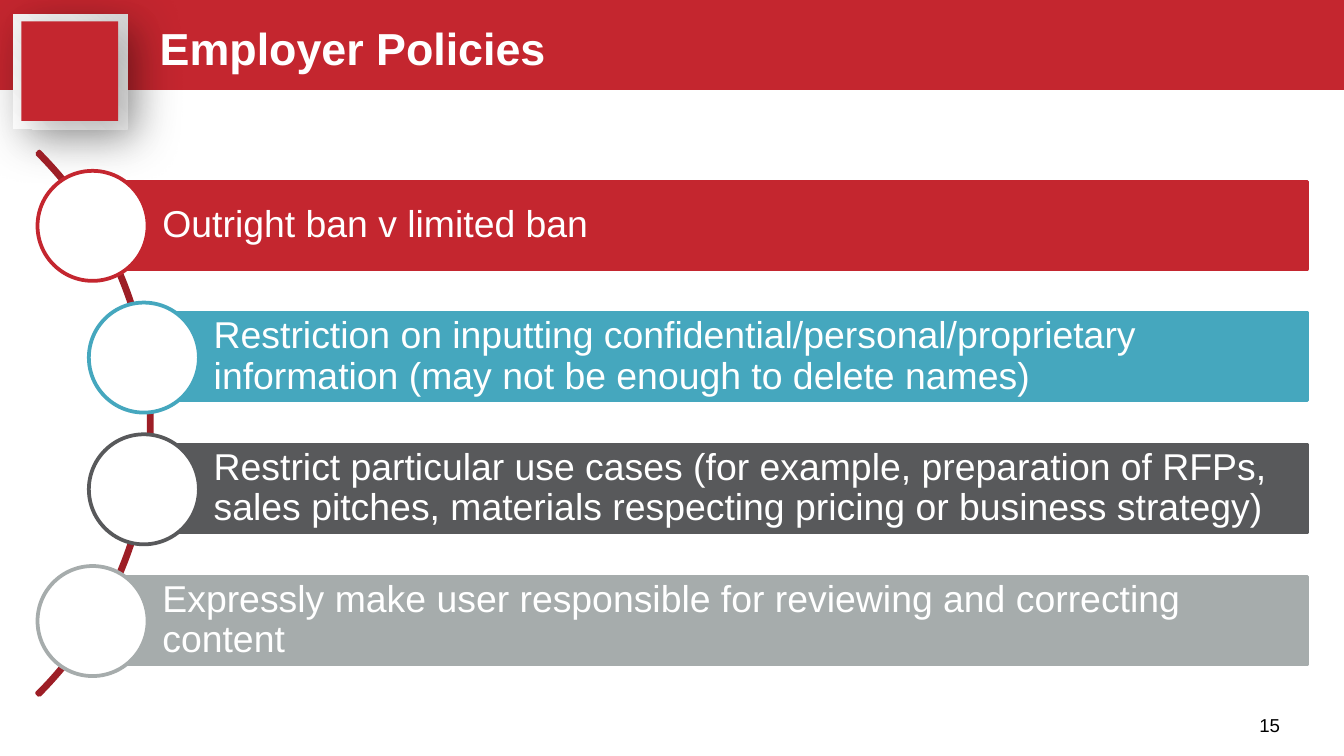
"""Build the Employer Policies slide."""
import lxml.etree
import pptx
import pptx.dml.color
import pptx.enum.shapes
import pptx.enum.text
import pptx.oxml
import pptx.oxml.ns
import pptx.util

Cm, Pt = pptx.util.Cm, pptx.util.Pt
RGB = pptx.dml.color.RGBColor.from_string
KIND = pptx.enum.shapes.MSO_SHAPE
HUES = {"red": "C4262F", "dark": "9D1E26", "teal": "45A7BE", "slate": "58595B",
        "grey": "A6ACAC", "white": "FFFFFF", "black": "000000"}


def draw(kind, left, top, width, height, fill=None, line=None):
    shape = slide.shapes.add_shape(kind, Cm(left), Cm(top), Cm(width), Cm(height))
    shape.shadow.inherit = False
    if fill:
        shape.fill.solid()
        shape.fill.fore_color.rgb = RGB(HUES[fill])
    else:
        shape.fill.background()
    if line:
        shape.line.color.rgb = RGB(HUES[line])
        shape.line.width = Pt(2)
    else:
        shape.line.fill.background()
    return shape


def write(shape, text, size, hue="white", bold=False, space=1.0, left=0, pad=0):
    frame = shape.text_frame
    frame.word_wrap = True
    frame.vertical_anchor = pptx.enum.text.MSO_ANCHOR.MIDDLE
    frame.margin_left = Cm(left)
    frame.margin_top = frame.margin_right = frame.margin_bottom = Cm(pad)
    para = frame.paragraphs[0]
    para.alignment = pptx.enum.text.PP_ALIGN.LEFT
    para.line_spacing = space
    run = para.add_run()
    run.text = text
    run.font.name = "Arial"
    run.font.size = Pt(size)
    run.font.bold = bold
    run.font.color.rgb = RGB(HUES[hue])


deck = pptx.Presentation()
deck.slide_width, deck.slide_height = Cm(25.4), Cm(14.29)
slide = deck.slides.add_slide(deck.slide_layouts[6])

draw(KIND.RECTANGLE, 0, 0, 25.4, 1.7, "red")
frame = draw(KIND.RECTANGLE, 0.25, 0.28, 2.16, 2.16)
badge = draw(KIND.RECTANGLE, 0.38, 0.43, 1.88, 1.83, "red")

frame.fill.gradient()
grad = frame.fill._xPr.find(pptx.oxml.ns.qn("a:gradFill"))
space = pptx.oxml.ns.nsdecls("a")
stops = "".join(f'<a:gs pos="{pos}000"><a:srgbClr val="{hue}"/></a:gs>'
                for pos, hue in [(0, "FFFFFF"), (73, "ECECEC"), (100, "D9D9D9")])
grad.getparent().replace(grad, pptx.oxml.parse_xml(
    f'<a:gradFill {space} rotWithShape="1"><a:gsLst>{stops}</a:gsLst>'
    '<a:lin ang="2700000" scaled="0"/></a:gradFill>'))

for shape, alpha, blur, dist in [(frame, 28, 28, 7), (badge, 25, 20, 9)]:
    shape.rotation = 270
    effect = shape._element.spPr.find(pptx.oxml.ns.qn("a:effectLst"))
    effect.append(pptx.oxml.parse_xml(
        f'<a:outerShdw {space} blurRad="{Pt(blur)}" dist="{Pt(dist)}" dir="2700000" '
        f'algn="tl" rotWithShape="0"><a:srgbClr val="{HUES["black"]}">'
        f'<a:alpha val="{alpha}000"/></a:srgbClr></a:outerShdw>'))

title = slide.shapes.add_textbox(Cm(3.02), Cm(0.1), Cm(21.64), Cm(1.5))
write(title, "Employer Policies", 24, bold=True, space=1.1)

arc = draw(KIND.BLOCK_ARC, -11.66, 0.74, 14.53, 14.53, line="dark")
for spot, value in enumerate([189, 27, 0.004]):
    arc.adjustments[spot] = value

rows = [
    (1.75, "red", "Outright ban v limited ban"),
    (2.72, "teal", "Restriction on inputting confidential/personal/proprietary "
                   "information (may not be enough to delete names)"),
    (2.72, "slate", "Restrict particular use cases (for example, preparation of RFPs, "
                    "sales pitches, materials respecting pricing or business strategy)"),
    (1.75, "grey", "Expressly make user responsible for reviewing and correcting content"),
]
for row, (left, hue, text) in enumerate(rows):
    top = 3.43 + 2.49 * row
    bar = draw(KIND.RECTANGLE, left, top, 24.71 - left, 1.65, hue, hue)
    write(bar, text, 20, space=0.9, left=1.32, pad=0.15)
    draw(KIND.OVAL, left - 1.04, top - 0.2, 2.08, 2.08, "white", hue)

number = slide.shapes.add_textbox(Cm(23.8), Cm(13.39), Cm(0.86), Cm(0.64))
write(number, "15", 10, "black")

deck.save("out.pptx")
